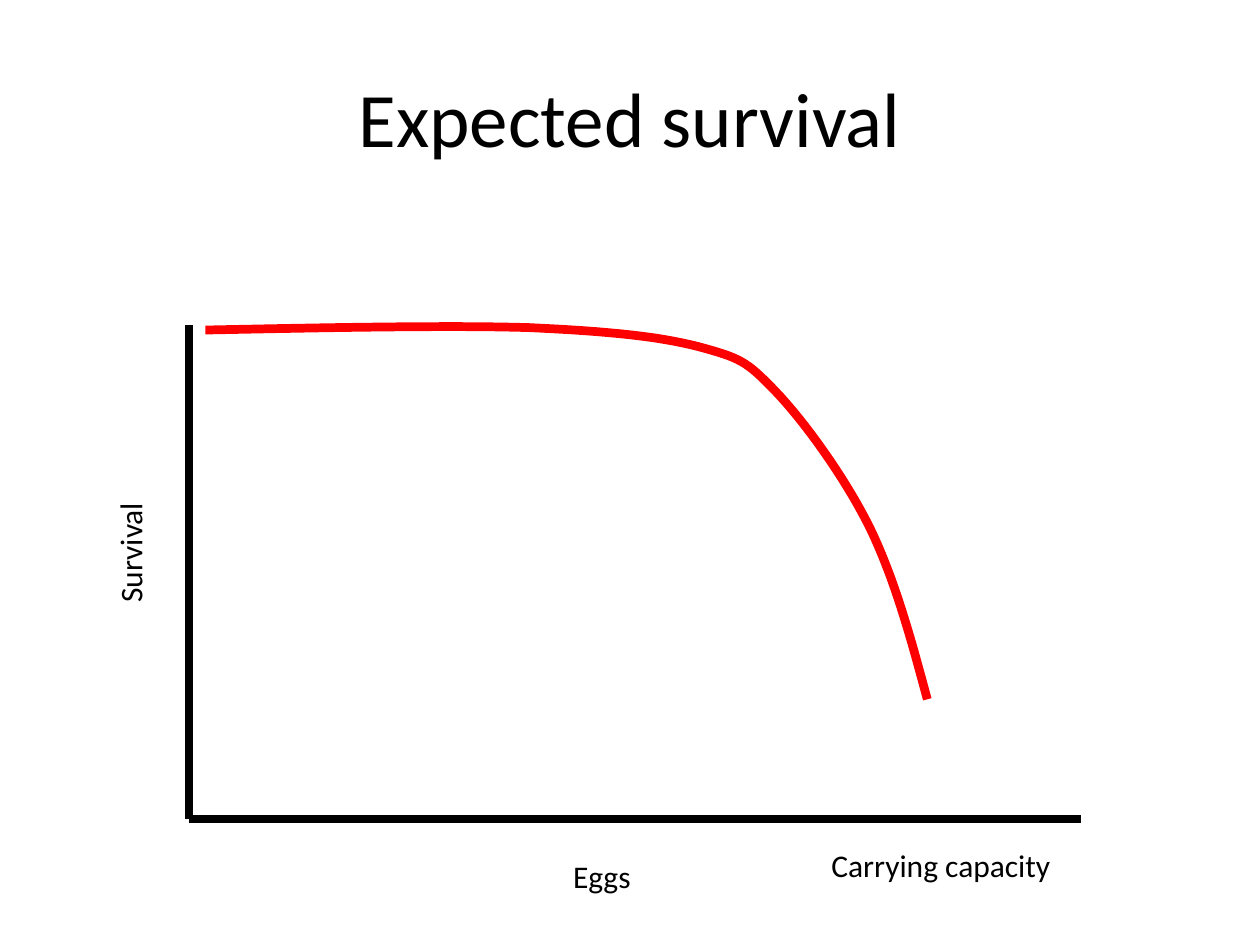
import dataclasses

import pptx
import pptx.dml.color
import pptx.enum.shapes
import pptx.enum.text
import pptx.oxml.ns
import pptx.util
from lxml import etree

Pt = pptx.util.Pt
Rgb = pptx.dml.color.RGBColor


@dataclasses.dataclass(frozen=True)
class Theme:
    """Hold the colours, font and sizes of the slide."""
    ink: Rgb = Rgb(0, 0, 0)
    curve: Rgb = Rgb(255, 0, 0)
    font: str = "Calibri"
    title: int = 44
    label: int = 18
    line: int = 5


THEME = Theme()
START = (117.4, 188.6)
BENDS = [
    ((186.5, 187.2), (255.6, 185.8), (302.4, 187.2)),
    ((349.2, 189.4), (375.8, 192.2), (398.9, 198)),
    ((422.6, 204.5), (426.2, 205.9), (442.8, 223.2)),
    ((459.4, 240.5), (482.4, 272.2), (496.8, 301)),
    ((511.2, 330.5), (520.6, 365), (529.9, 399.6)),
]


def place(shape, left, top, width, height):
    """Set the position and size of a shape in points."""
    shape.left, shape.top = Pt(left), Pt(top)
    shape.width, shape.height = Pt(width), Pt(height)


def write(frame, text, size):
    """Put one line of styled text in a frame."""
    frame.text = text
    font = frame.paragraphs[0].font
    font.name, font.size = THEME.font, Pt(size)
    font.color.rgb = THEME.ink


def add_title(slide, text):
    """Fill and format the title placeholder."""
    title = slide.shapes.title
    place(title, 36, 21.6, 648, 90)
    write(title.text_frame, text, THEME.title)
    title.text_frame.vertical_anchor = pptx.enum.text.MSO_ANCHOR.MIDDLE
    title.text_frame.paragraphs[0].alignment = pptx.enum.text.PP_ALIGN.CENTER


def add_label(slide, text, left, top, width, turn=0):
    """Add a label that does not wrap, turned if asked."""
    box = slide.shapes.add_textbox(Pt(left), Pt(top), Pt(width), Pt(28.8))
    box.rotation = turn
    write(box.text_frame, text, THEME.label)
    box.text_frame.word_wrap = False
    box.text_frame.auto_size = pptx.enum.text.MSO_AUTO_SIZE.SHAPE_TO_FIT_TEXT


def add_axis(slide, start, end):
    """Draw a straight axis between two points."""
    kind = pptx.enum.shapes.MSO_CONNECTOR.STRAIGHT
    axis = slide.shapes.add_connector(kind, *map(Pt, start + end))
    axis.line.color.rgb, axis.line.width = THEME.ink, Pt(THEME.line)
    props = axis._element.spPr
    etree.SubElement(props, pptx.oxml.ns.qn("a:effectLst"))


def trace(start, bends, steps=16):
    """Return points along a chain of cubic curves."""
    points = []
    for bend in bends:
        for step in range(1, steps + 1):
            t = step / steps
            u = 1 - t
            points.append(tuple(
                Pt(u**3 * a + 3 * u * u * t * b + 3 * u * t * t * c + t**3 * d)
                for a, b, c, d in zip(start, *bend)))
        start = bend[-1]
    return points


def add_curve(slide, start, bends):
    """Draw an open, unfilled curve."""
    pen = slide.shapes.build_freeform(*map(Pt, start))
    pen.add_line_segments(trace(start, bends), close=False)
    curve = pen.convert_to_shape()
    curve.shadow.inherit = False
    curve.fill.background()
    curve.line.color.rgb, curve.line.width = THEME.curve, Pt(THEME.line)


def main():
    """Build and save the slide."""
    deck = pptx.Presentation()
    deck.slide_width, deck.slide_height = Pt(720), Pt(540)
    slide = deck.slides.add_slide(deck.slide_layouts[5])
    add_title(slide, "Expected survival")
    root = (108, 468)
    add_axis(slide, (108, 185.8), root)
    add_axis(slide, root, (617.8, 468))
    add_curve(slide, START, BENDS)
    add_label(slide, "Survival", 38.2, 301, 72, 270)
    add_label(slide, "Eggs", 320.4, 486, 47.5)
    add_label(slide, "Carrying capacity", 468, 480.2, 141.1)
    deck.save("out.pptx")


if __name__ == "__main__":
    main()
